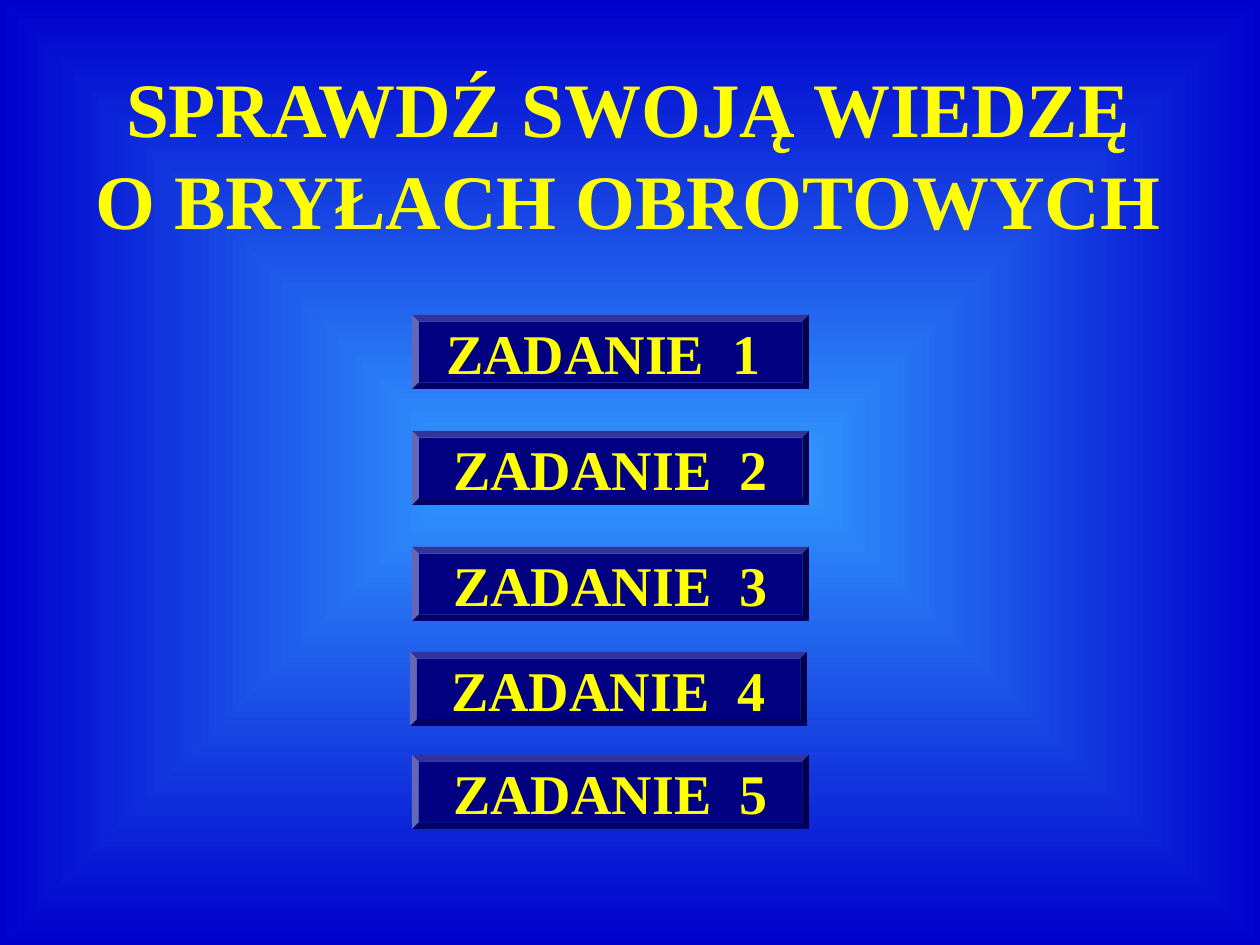
"""Build the quiz menu slide about solids of revolution."""
import dataclasses

import pptx
import pptx.dml.color
import pptx.enum.shapes
import pptx.enum.text
import pptx.oxml
import pptx.oxml.ns
import pptx.util

EMU_PER_PX = 914400 / 126


def px(length):
    return pptx.util.Emu(round(length * EMU_PER_PX))


def rgb(value):
    return pptx.dml.color.RGBColor.from_string(value)


@dataclasses.dataclass(frozen=True)
class Theme:
    font: str = "Times New Roman"
    text: str = "FFFF00"
    button: str = "000080"
    glow: str = "3399FF"
    edge: str = "0000CC"
    title_size: int = 44
    button_size: int = 32


class SlideBuilder:
    def __init__(self, slide, theme):
        self.slide = slide
        self.theme = theme

    def background(self):
        fill = self.slide.background.fill
        fill.gradient()
        for stop, color in zip(fill.gradient_stops, (self.theme.glow, self.theme.edge)):
            stop.color.rgb = rgb(color)
        linear = next(self.slide.element.iter(pptx.oxml.ns.qn("a:lin")))
        centered = pptx.oxml.parse_xml(
            f'<a:path {pptx.oxml.ns.nsdecls("a")} path="shape">'
            '<a:fillToRect l="50000" t="50000" r="50000" b="50000"/></a:path>'
        )
        linear.getparent().replace(linear, centered)

    def add_lines(self, frame, lines, size):
        frame.word_wrap = False
        for index, line in enumerate(lines):
            paragraph = frame.add_paragraph() if index else frame.paragraphs[0]
            paragraph.alignment = pptx.enum.text.PP_ALIGN.CENTER
            run = paragraph.add_run()
            run.text = line
            run.font.name = self.theme.font
            run.font.size = pptx.util.Pt(size)
            run.font.bold = True
            run.font.color.rgb = rgb(self.theme.text)

    def title(self, lines, left, top, width, height):
        box = self.slide.shapes.add_textbox(px(left), px(top), px(width), px(height))
        self.add_lines(box.text_frame, lines, self.theme.title_size)
        box.text_frame.auto_size = pptx.enum.text.MSO_AUTO_SIZE.SHAPE_TO_FIT_TEXT

    def button(self, label, left, top, width, height):
        shape = self.slide.shapes.add_shape(
            pptx.enum.shapes.MSO_SHAPE.BEVEL, px(left), px(top), px(width), px(height)
        )
        shape.adjustments[0] = 0.09
        shape.shadow.inherit = False
        shape.fill.solid()
        shape.fill.fore_color.rgb = rgb(self.theme.button)
        shape.line.fill.background()
        shape.text_frame.vertical_anchor = pptx.enum.text.MSO_ANCHOR.MIDDLE
        self.add_lines(shape.text_frame, [label], self.theme.button_size)


def main():
    presentation = pptx.Presentation()
    presentation.slide_width = px(1260)
    presentation.slide_height = px(945)
    slide = presentation.slides.add_slide(presentation.slide_layouts[6])
    builder = SlideBuilder(slide, Theme())
    builder.background()
    builder.title(["SPRAWDŹ SWOJĄ WIEDZĘ", "O BRYŁACH OBROTOWYCH"], 81, 54, 1095, 198)
    buttons = [
        ("ZADANIE  1 ", 412, 315),
        ("ZADANIE  2", 412, 431),
        ("ZADANIE  3", 412, 547),
        ("ZADANIE  4", 410, 652),
        ("ZADANIE  5", 412, 755),
    ]
    for label, left, top in buttons:
        builder.button(label, left, top, 397, 74)
    presentation.save("out.pptx")


if __name__ == "__main__":
    main()
